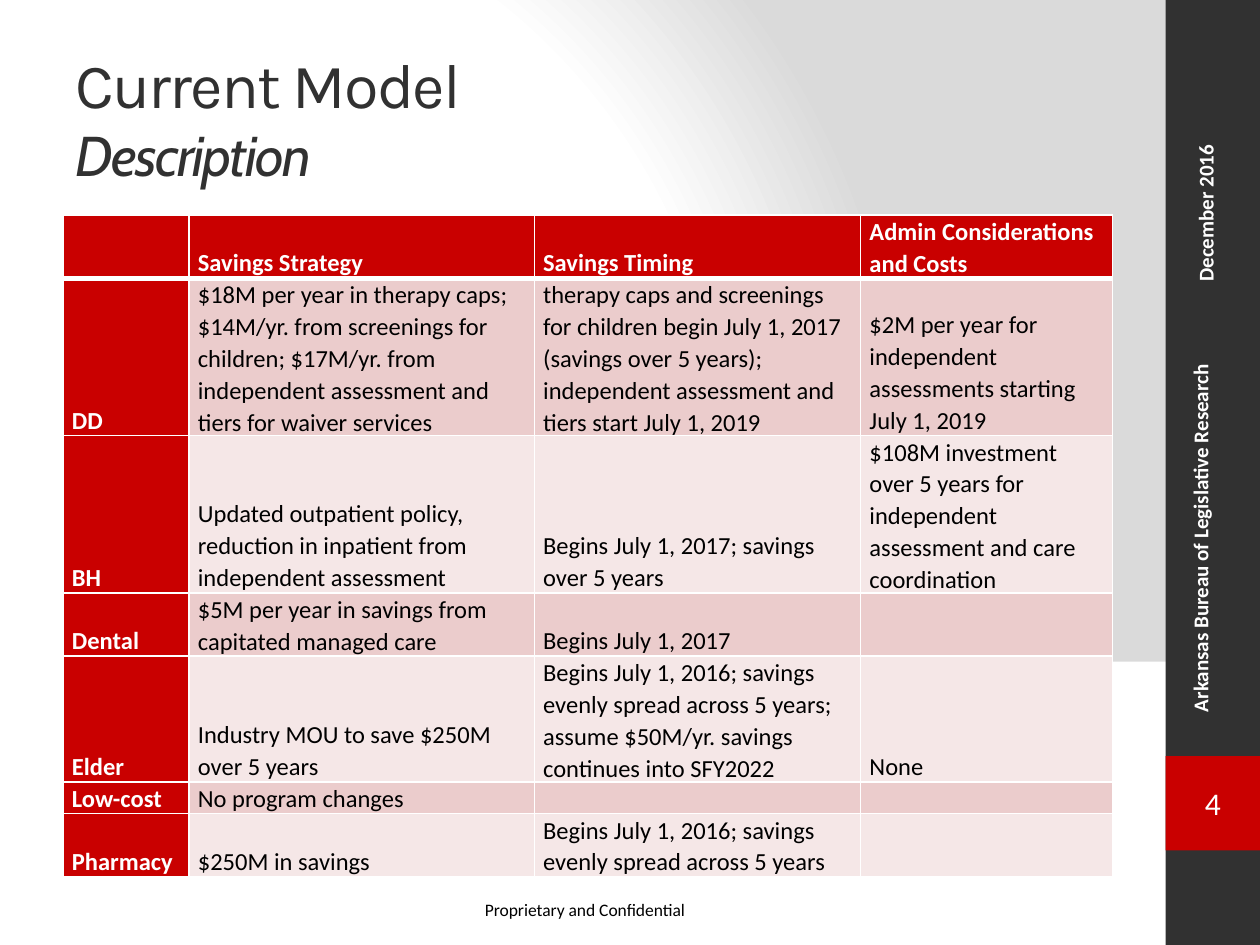
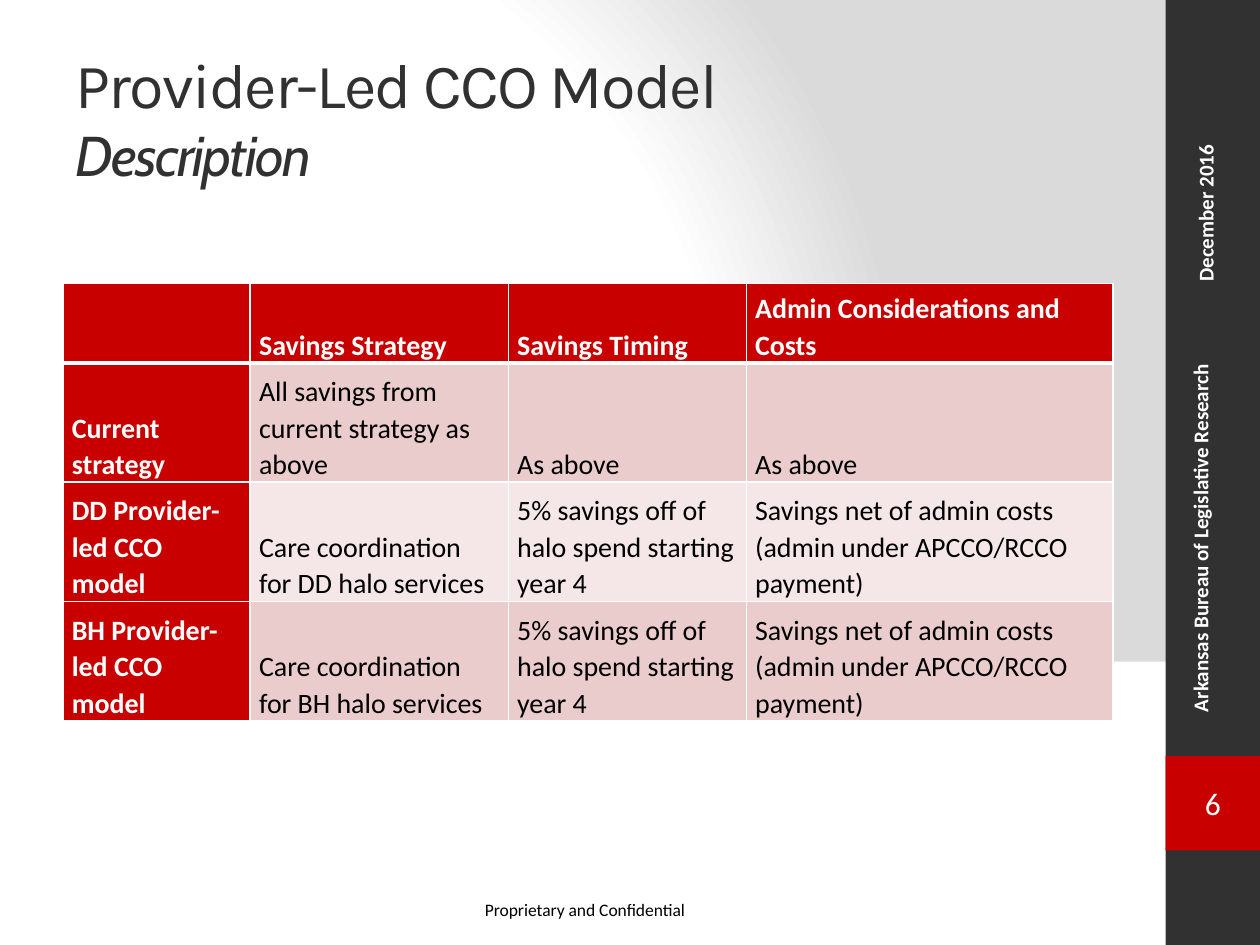
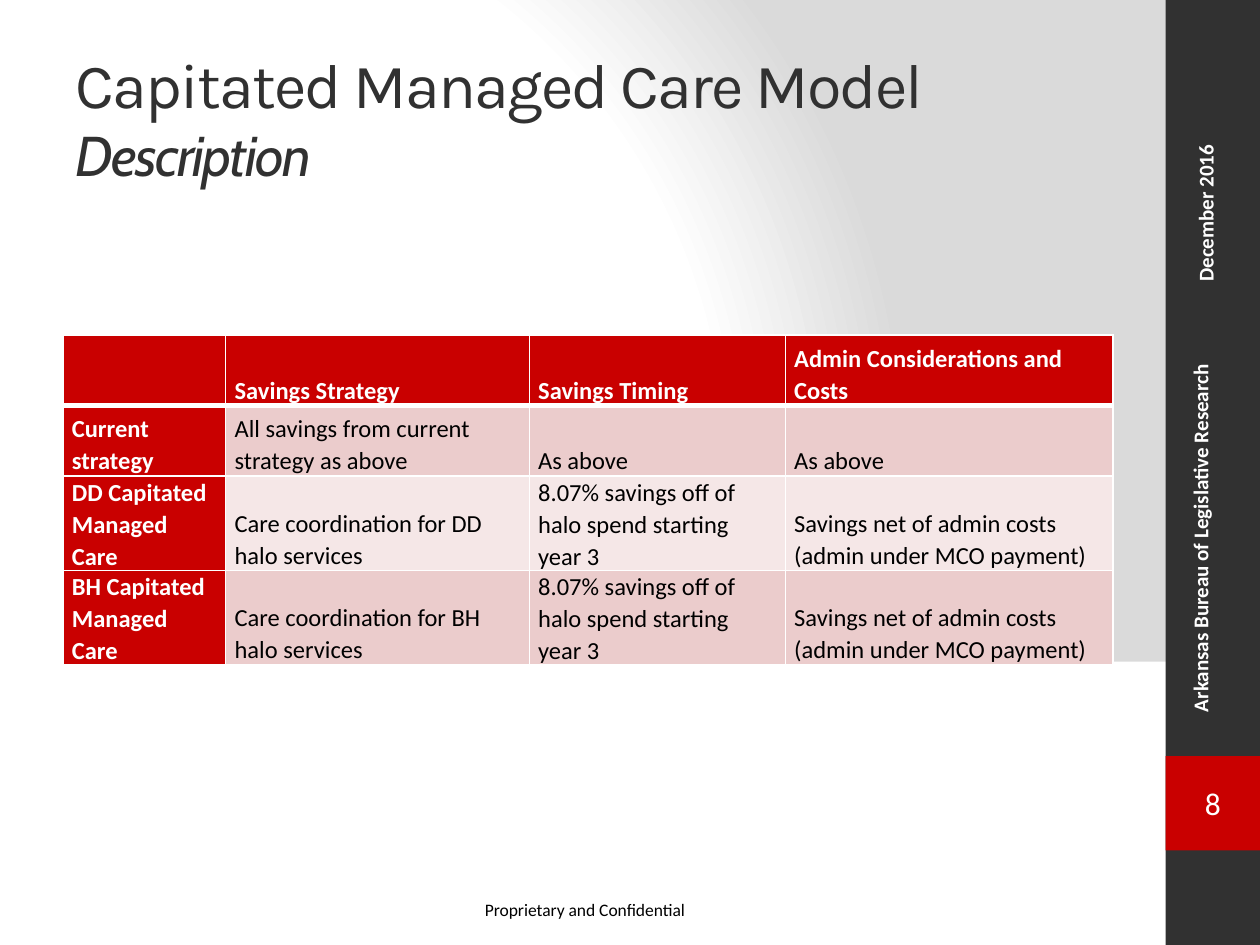
import lxml.etree
import pptx
import pptx.dml.color
import pptx.enum.shapes
import pptx.enum.text
import pptx.oxml.ns
import pptx.util

Pt = pptx.util.Pt
qn = pptx.oxml.ns.qn
Anchor = pptx.enum.text.MSO_ANCHOR
Align = pptx.enum.text.PP_ALIGN
Fit = pptx.enum.text.MSO_AUTO_SIZE

WHITE, BLACK, DARK, RED = "FFFFFF", "000000", "313131", "C90000"
BANDS = ["F5E7E7", "EBCCCC"]
GLOW = [(0, WHITE), (75, WHITE), (100, "DADADA")]
FOCUS = {"l": 20, "t": 50, "r": 100, "b": 50}
HEADS = ["", "Savings Strategy", "Savings Timing", "Admin Considerations and Costs"]

CURRENT = [
    HEADS,
    ["DD",
     "$18M per year in therapy caps; $14M/yr. from screenings for children; "
     "$17M/yr. from independent assessment and tiers for waiver services",
     "therapy caps and screenings for children begin July 1, 2017 (savings over 5 years); "
     "independent assessment and tiers start July 1, 2019",
     "$2M per year for independent assessments starting July 1, 2019"],
    ["BH",
     "Updated outpatient policy, reduction in inpatient from independent assessment",
     "Begins July 1, 2017; savings over 5 years",
     "$108M investment over 5 years for independent assessment and care coordination"],
    ["Dental", "$5M per year in savings from capitated managed care",
     "Begins July 1, 2017", ""],
    ["Elder", "Industry MOU to save $250M over 5 years",
     "Begins July 1, 2016; savings evenly spread across 5 years; "
     "assume $50M/yr. savings continues into SFY2022", "None"],
    ["Low-cost", "No program changes", "", ""],
    ["Pharmacy", "$250M in savings",
     "Begins July 1, 2016; savings evenly spread across 5 years", ""],
]


def plan(label, timing, payer):
    rows = [[f"{group} {label}", f"Care coordination for {group} halo services", timing,
             f"Savings net of admin costs (admin under {payer} payment)"]
            for group in ("DD", "BH")]
    base = ["Current strategy", "All savings from current strategy as above",
            "As above", "As above"]
    return [HEADS, base] + rows


def tint(color):
    return pptx.dml.color.RGBColor.from_string(color)


def paint(fill, color):
    fill.solid()
    fill.fore_color.rgb = tint(color)


def write(para, words, size=12, color=WHITE, font="Calibri", bold=False,
          italic=False, space=0):
    if not words:
        end = lxml.etree.SubElement(para._p, qn("a:endParaRPr"))
        end.set("sz", str(size * 100))
        return
    run = para.add_run()
    run.text = words
    run.font.size = Pt(size)
    run.font.name = font
    run.font.bold = bold
    run.font.italic = italic
    run.font.color.rgb = tint(color)
    if space:
        run.font._element.set("spc", str(space * 100))


def block(slide, left, top, width, height, color):
    shape = slide.shapes.add_shape(pptx.enum.shapes.MSO_SHAPE.RECTANGLE,
                                   Pt(left), Pt(top), Pt(width), Pt(height))
    shape.shadow.inherit = False
    paint(shape.fill, color)
    shape.line.fill.background()
    return shape.text_frame


def label(slide, left, top, width, height, wrap=True, turn=False):
    frame = slide.shapes.add_textbox(Pt(left), Pt(top), Pt(width), Pt(height)).text_frame
    frame.word_wrap = wrap
    frame.auto_size = Fit.SHAPE_TO_FIT_TEXT
    if turn:
        frame._txBody.bodyPr.set("vert", "vert270")
    return frame


def glow(slide):
    slide.background.fill.gradient()
    grad = slide.element.find(".//" + qn("a:gradFill"))
    for child in list(grad):
        grad.remove(child)
    stops = lxml.etree.SubElement(grad, qn("a:gsLst"))
    for place, color in GLOW:
        stop = lxml.etree.SubElement(stops, qn("a:gs"), pos=str(place * 1000))
        lxml.etree.SubElement(stop, qn("a:srgbClr"), val=color)
    ring = lxml.etree.SubElement(grad, qn("a:path"))
    ring.set("path", "circle")
    focus = lxml.etree.SubElement(ring, qn("a:fillToRect"))
    for side, share in FOCUS.items():
        focus.set(side, str(share * 1000))


def frame(slide, number):
    glow(slide)
    block(slide, 0, 378, 672, 162, WHITE)
    block(slide, 666, 0, 54, 540, DARK)
    badge = block(slide, 666, 432, 54, 54, RED)
    badge.vertical_anchor = Anchor.MIDDLE
    badge.paragraphs[0].alignment = Align.CENTER
    write(badge.paragraphs[0], str(number), size=18)
    foot = label(slide, 270, 510, 130, 19.4, wrap=False)
    write(foot.paragraphs[0], "Proprietary and Confidential", size=10, color=BLACK)
    owner = label(slide, 675, 162, 29, 252, turn=True)
    write(owner.paragraphs[0], "Arkansas Bureau of Legislative Research", bold=True)
    date = label(slide, 678, 36, 29, 132, turn=True)
    write(date.paragraphs[0], "December 2016", bold=True)


def title(slide, name):
    box = label(slide, 36, 21.6, 600, 90)
    box.auto_size = Fit.NONE
    box.vertical_anchor = Anchor.MIDDLE
    para = box.paragraphs[0]
    write(para, name, size=36, color=DARK, font="Karla", space=-1)
    para.add_line_break()
    write(para, "Description", size=32, color=DARK, font="Cabin", italic=True, space=-1)


def edge(cell, **widths):
    props = cell._tc.get_or_add_tcPr()
    for spot, side in enumerate("LRTB"):
        line = lxml.etree.Element(qn("a:ln" + side), w=str(Pt(widths.get(side, 1))))
        fill = lxml.etree.SubElement(line, qn("a:solidFill"))
        lxml.etree.SubElement(fill, qn("a:srgbClr"), val=WHITE)
        props.insert(spot, line)


def grid(slide, top, cols, highs, rows, size):
    table = slide.shapes.add_table(len(rows), len(cols), Pt(36), Pt(top),
                                   Pt(sum(cols)), Pt(sum(highs))).table
    for col, width in zip(table.columns, cols):
        col.width = Pt(width)
    for r, (row, high) in enumerate(zip(rows, highs)):
        table.rows[r].height = Pt(high)
        for c, words in enumerate(row):
            cell = table.cell(r, c)
            head = r == 0 or c == 0
            paint(cell.fill, RED if head else BANDS[r % 2])
            edge(cell, B=3 if r == 0 else 1, T=3 if r == 1 else 1)
            cell.vertical_anchor = Anchor.BOTTOM
            cell.margin_left = cell.margin_right = Pt(5.1)
            cell.margin_top = cell.margin_bottom = 0
            para = cell.text_frame.paragraphs[0]
            para.line_spacing = 1.07
            write(para, words, size=size, color=WHITE if head else BLACK, bold=head)


def main():
    deck = pptx.Presentation()
    deck.slide_width, deck.slide_height = Pt(720), Pt(540)
    pages = [
        (4, "Current Model", 123, [72, 197.3, 186.5, 144],
         [36, 90, 90, 36, 72, 18, 36], CURRENT, 14),
        (6, "Provider-Led CCO Model", 162, [107, 147.5, 136, 209.5],
         [45.4, 68.2, 68.2, 68.2],
         plan("Provider-led CCO model", "5% savings off of halo spend starting year 4",
              "APCCO/RCCO"), 16),
        (8, "Capitated Managed Care Model", 191.5, [93, 173.5, 146.3, 187.2],
         [40.3, 40.3, 54, 54],
         plan("Capitated Managed Care", "8.07% savings off of halo spend starting year 3",
              "MCO"), 14),
    ]
    for number, name, top, cols, highs, rows, size in pages:
        slide = deck.slides.add_slide(deck.slide_layouts[6])
        frame(slide, number)
        title(slide, name)
        grid(slide, top, cols, highs, rows, size)
    deck.save("out.pptx")


if __name__ == "__main__":
    main()
